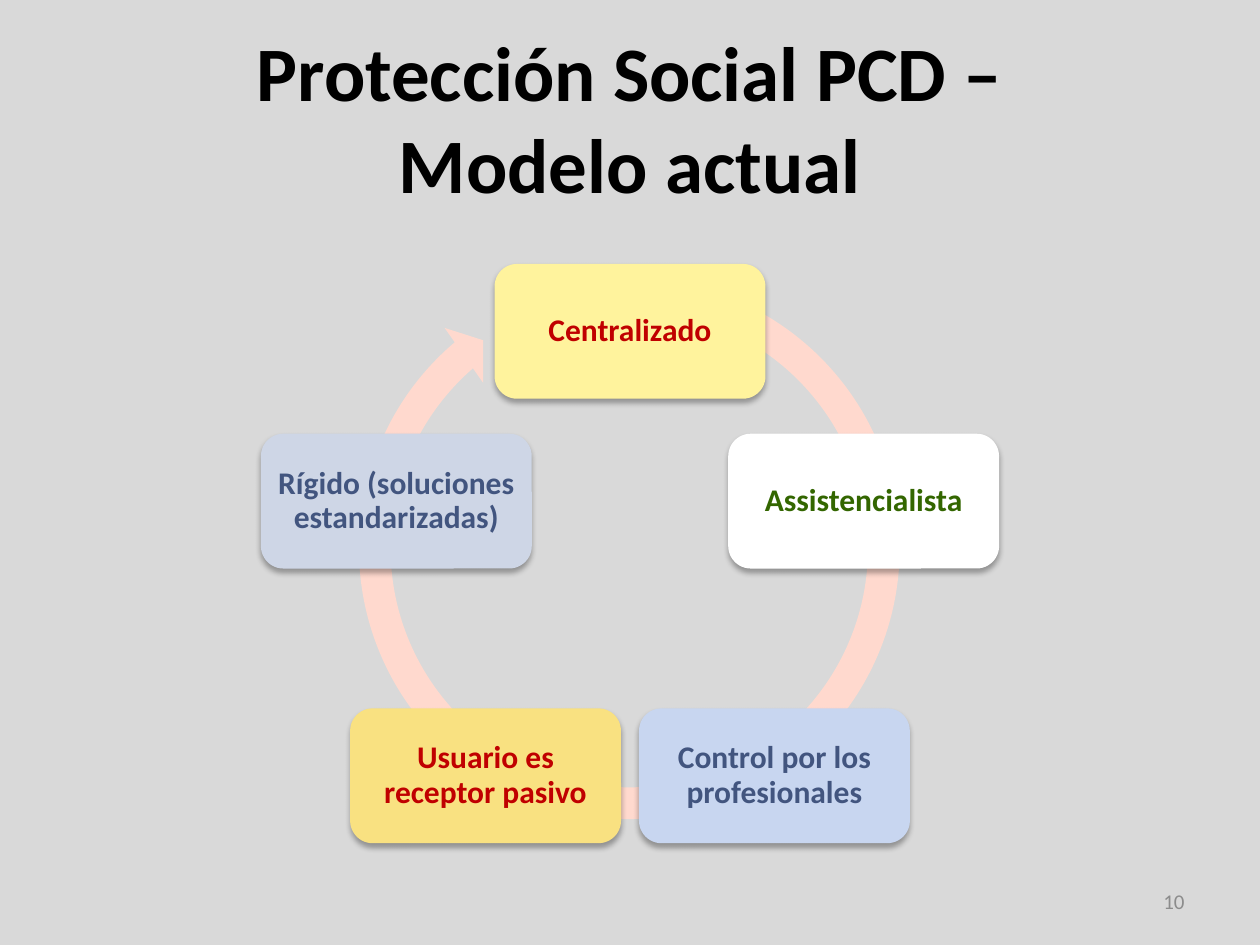
from dataclasses import dataclass
from math import cos, radians, sin

from lxml.etree import SubElement
from pptx import Presentation
from pptx.dml.color import RGBColor
from pptx.enum.shapes import MSO_SHAPE as Preset
from pptx.enum.text import MSO_ANCHOR as Anchor, PP_ALIGN as Align
from pptx.oxml.ns import qn
from pptx.util import Emu, Pt

EMU_PER_PX = 9144  # 100 px to the inch


@dataclass(frozen=True)
class Theme:
    font: str = "Calibri"
    background: str = "D9D9D9"
    ring: str = "FFD9CE"
    title: str = "000000"
    number: str = "8C8C8C"
    red: str = "C00000"
    green: str = "336600"
    slate: str = "42557F"
    title_size: int = 44
    trait_size: int = 18
    number_size: int = 12


@dataclass(frozen=True)
class Trait:
    label: str
    fill: str
    ink: str


THEME = Theme()
TRAITS = [  # clockwise from the top
    Trait("Centralizado", "FFF39D", THEME.red),
    Trait("Assistencialista", "FFFFFF", THEME.green),
    Trait("Control por los profesionales", "C8D6F0", THEME.slate),
    Trait("Usuario es receptor pasivo", "F9E181", THEME.red),
    Trait("Rígido (soluciones estandarizadas)", "CED6E6", THEME.slate),
]
CENTER_X, CENTER_Y, RADIUS = 500, 458, 195
CARD_W, CARD_H, CARD_INSET = 215, 107, 7
RING_SIZE = 457
RING_ADJUSTMENTS = (0.055, 3.307, 137.672, 173.913, 0.058)


def px(length: float) -> Emu:
    return Emu(round(length * EMU_PER_PX))


def box(left: float, top: float, width: float, height: float) -> list[Emu]:
    return [px(length) for length in (left, top, width, height)]


def paint(fill, color: str) -> None:
    fill.solid()
    fill.fore_color.rgb = RGBColor.from_string(color)


def write(shape, text: str, size: int, color: str, align: Align, bold: bool = True):
    frame = shape.text_frame
    frame.word_wrap = True
    frame.vertical_anchor = Anchor.MIDDLE
    frame.text = text
    paragraph = frame.paragraphs[0]
    paragraph.alignment = align
    for run in paragraph.runs:
        styles = {"name": THEME.font, "size": Pt(size), "bold": bold}
        for attribute, value in styles.items():
            setattr(run.font, attribute, value)
        run.font.color.rgb = RGBColor.from_string(color)
    return frame


def add_preset(slide, preset: Preset, place: list[Emu], color: str):
    shape = slide.shapes.add_shape(preset, *place)
    shape.shadow.inherit = False
    paint(shape.fill, color)
    shape.line.fill.background()
    return shape


def add_soft_shadow(shape) -> None:
    effects = shape.element.spPr.find(qn("a:effectLst"))
    shadow = SubElement(effects, qn("a:outerShdw"), blurRad=str(Pt(3.5)),
                        dist=str(Pt(2.2)), dir="5400000", rotWithShape="0")
    black = SubElement(shadow, qn("a:srgbClr"), val="000000")
    SubElement(black, qn("a:alpha"), val="32000")


def add_trait(slide, trait: Trait, angle: float) -> None:
    left = CENTER_X + RADIUS * sin(radians(angle)) - CARD_W / 2
    top = CENTER_Y - RADIUS * cos(radians(angle)) - CARD_H / 2
    card = add_preset(slide, Preset.ROUNDED_RECTANGLE,
                      box(left, top, CARD_W, CARD_H), trait.fill)
    add_soft_shadow(card)
    frame = write(card, trait.label, THEME.trait_size, trait.ink, Align.CENTER)
    frame.paragraphs[0].line_spacing = 0.9
    for side in ("left", "top", "right", "bottom"):
        setattr(frame, f"margin_{side}", px(CARD_INSET))


def main() -> None:
    deck = Presentation()
    deck.slide_width, deck.slide_height = px(1000), px(750)
    slide = deck.slides.add_slide(deck.slide_layouts[6])
    paint(slide.background.fill, THEME.background)

    # Title and page number
    title = slide.shapes.add_textbox(*box(50, 30, 900, 125))
    write(title, "Protección Social PCD –\vModelo actual",
          THEME.title_size, THEME.title, Align.CENTER)
    number = slide.shapes.add_textbox(*box(717, 695, 233, 40))
    write(number, "10", THEME.number_size, THEME.number, Align.RIGHT, bold=False)

    # Cycle arrow behind the cards
    ring = add_preset(slide, Preset.CIRCULAR_ARROW,
                      box(271, 207, RING_SIZE, RING_SIZE), THEME.ring)
    for index, value in enumerate(RING_ADJUSTMENTS):
        ring.adjustments[index] = value

    # Cards evenly spaced around the cycle
    for index, trait in enumerate(TRAITS):
        add_trait(slide, trait, index * 360 / len(TRAITS))

    deck.save("out.pptx")


if __name__ == "__main__":
    main()
